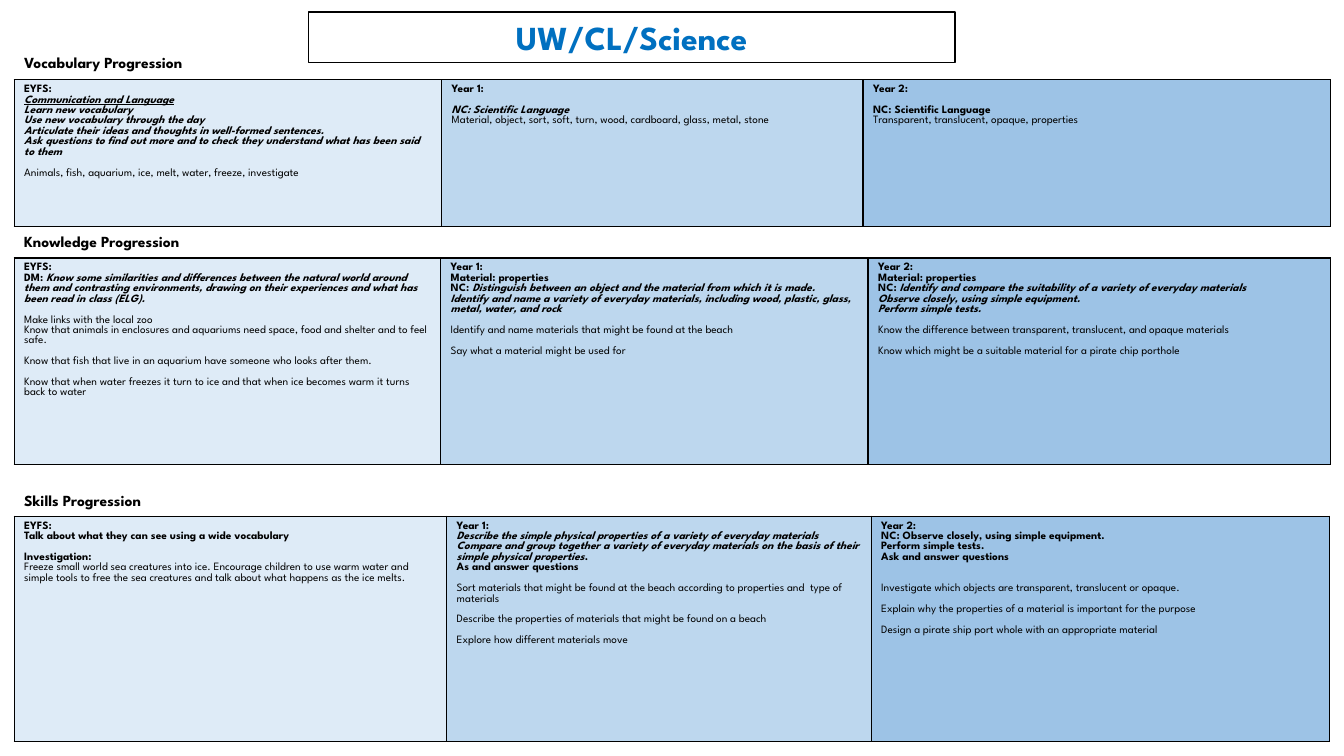
from pptx import Presentation
from pptx import util as u
from pptx.dml.color import RGBColor
from pptx.enum import text
from pptx.oxml import parse_xml
from pptx.oxml.ns import nsdecls

FONT = "League Spartan"
BLACK = RGBColor(0x00, 0x00, 0x00)
BLUE = RGBColor(0x00, 0x70, 0xC0)
TINTS = [RGBColor(0xDE, 0xEB, 0xF7), RGBColor(0xBD, 0xD7, 0xEE),
         RGBColor(0x9D, 0xC3, 0xE6)]
LEFT = 0.14
LINE = 7.4  # height of one line of cell text, in points

# A paragraph is "style|text|style|text...": b bold, i italic, u underlined,
# and each + in the first style leaves one line of space above.
VOCAB = [
    ["b|EYFS:",
     "biu|Communication and Language",
     "bi|Learn new vocabulary",
     "bi|Use new vocabulary through the day",
     "bi|Articulate their ideas and thoughts in well-formed sentences.",
     "bi|Ask questions to find out more and to check they understand what "
     "has been said to them",
     "+|Animals, fish, aquarium, ice, melt, water, freeze, investigate"],
    ["b|Year 1:",
     "+bi|NC: Scientific Language",
     "|Material, object, sort, soft, turn, wood, cardboard, glass, metal, stone"],
    ["b|Year 2:",
     "+b|NC: Scientific Language",
     "|Transparent, translucent, opaque, properties"],
]
KNOW = [
    ["b|EYFS:",
     "b|DM: |bi|Know some similarities and differences between the natural "
     "world around them and contrasting environments, drawing on their "
     "experiences and what has been read in class (ELG).",
     "+|Make links with the local zoo",
     "|Know that animals in enclosures and aquariums need space, food and "
     "shelter and to feel safe.",
     "+|Know that fish that live in an aquarium have someone who looks after them.",
     "+|Know that when water freezes it turn to ice and that when ice becomes "
     "warm it turns back to water"],
    ["b|Year 1:",
     "b|Material: properties",
     "b|NC: |bi|Distinguish between an object and the material from which it is made.",
     "bi|Identify and name a variety of everyday materials, including wood, "
     "plastic, glass, metal, water, and rock",
     "+|Identify and name materials that might be found at the beach",
     "+|Say what a material might be used for"],
    ["b|Year 2:",
     "b|Material: properties",
     "b|NC: |bi|Identify and compare the suitability of a variety of everyday materials",
     "bi|Observe closely, using simple equipment.",
     "bi|Perform simple tests.",
     "+|Know the difference between transparent, translucent, and opaque materials",
     "+|Know which might be a suitable material for a pirate chip porthole"],
]
SKILLS = [
    ["b|EYFS:",
     "b|Talk about what they can see using a wide vocabulary",
     "+b|Investigation:",
     "|Freeze small world sea creatures into ice. Encourage children to use "
     "warm water and simple tools to free the sea creatures and talk about "
     "what happens as the ice melts."],
    ["b|Year 1:",
     "bi|Describe the simple physical properties of a variety of everyday materials",
     "bi|Compare and group together a variety of everyday materials on the "
     "basis of their simple physical properties|b|.",
     "b|As and answer questions",
     "+|Sort materials that might be found at the beach according to "
     "properties and  type of materials",
     "+|Describe the properties of materials that might be found on a beach",
     "+|Explore how different materials move"],
    ["b|Year 2:",
     "b|NC: Observe closely, using simple equipment.",
     "b|Perform simple tests.",
     "b|Ask and answer questions",
     "++|Investigate which objects are transparent, translucent or opaque.",
     "+|Explain why the properties of a material is important for the purpose",
     "+|Design a pirate ship port whole with an appropriate material"],
]

# Heading, heading top, table top, table height, column widths, cells
BANDS = [
    ("Vocabulary Progression", 0.48, 0.79, 1.46, (4.24, 4.18, 4.64), VOCAB),
    ("Knowledge Progression", 2.25, 2.56, 2.05, (4.23, 4.24, 4.59), KNOW),
    ("Skills Progression", 4.82, 5.12, 2.24, (4.29, 4.21, 4.55), SKILLS),
]


def style(run, size, color=BLACK, marks="b"):
    font = run.font
    font.name, font.size, font.color.rgb = FONT, u.Pt(size), color
    font.bold, font.italic = "b" in marks, "i" in marks
    font.underline = "u" in marks


def border(cell):
    props = cell._tc.get_or_add_tcPr()
    for i, side in enumerate("LRTB"):
        props.insert(i, parse_xml(
            f'<a:ln{side} {nsdecls("a")} w="12700"><a:solidFill>'
            f'<a:srgbClr val="{BLACK}"/></a:solidFill></a:ln{side}>'))


def fill_cell(cell, lines, tint):
    cell.fill.solid()
    cell.fill.fore_color.rgb = tint
    border(cell)
    frame = cell.text_frame
    for i, line in enumerate(lines):
        para = frame.add_paragraph() if i else frame.paragraphs[0]
        parts = line.split("|")
        para.space_before = u.Pt(LINE * parts[0].count("+"))
        for marks, words in zip(parts[::2], parts[1::2]):
            run = para.add_run()
            run.text = words
            style(run, 8, marks=marks)


def add_title(slide, x, y, w, h):
    box = slide.shapes.title
    box.left, box.top, box.width, box.height = map(u.Inches, (x, y, w, h))
    box.line.color.rgb = BLACK
    box.line.width = u.Pt(1.25)
    frame = box.text_frame
    frame.text = "UW/CL/Science"
    frame.auto_size = text.MSO_AUTO_SIZE.NONE
    frame.vertical_anchor = text.MSO_ANCHOR.MIDDLE
    para = frame.paragraphs[0]
    para.alignment = text.PP_ALIGN.CENTER
    para.line_spacing = 1.0
    para.space_before = u.Pt(0)
    style(para.runs[0], 24, BLUE)


def add_band(slide, name, head, top, high, cols, cells):
    # Heading
    box = slide.shapes.add_textbox(u.Inches(LEFT), u.Inches(head),
                                   u.Inches(2.28), u.Inches(0.29))
    box.text_frame.word_wrap = True
    box.text_frame.text = name
    style(box.text_frame.paragraphs[0].runs[0], 11)
    # One-row table, a column per year group
    table = slide.shapes.add_table(1, len(cols), u.Inches(LEFT), u.Inches(top),
                                   u.Inches(sum(cols)), u.Inches(high)).table
    table.first_row = table.horz_banding = False
    for i, (wide, lines, tint) in enumerate(zip(cols, cells, TINTS)):
        table.columns[i].width = u.Inches(wide)
        fill_cell(table.cell(0, i), lines, tint)


def main():
    deck = Presentation()
    deck.slide_width, deck.slide_height = u.Inches(13.33), u.Inches(7.5)
    slide = deck.slides.add_slide(deck.slide_layouts[5])
    add_title(slide, 3.06, 0.12, 6.41, 0.5)
    for band in BANDS:
        add_band(slide, *band)
    deck.save("out.pptx")


if __name__ == "__main__":
    main()
